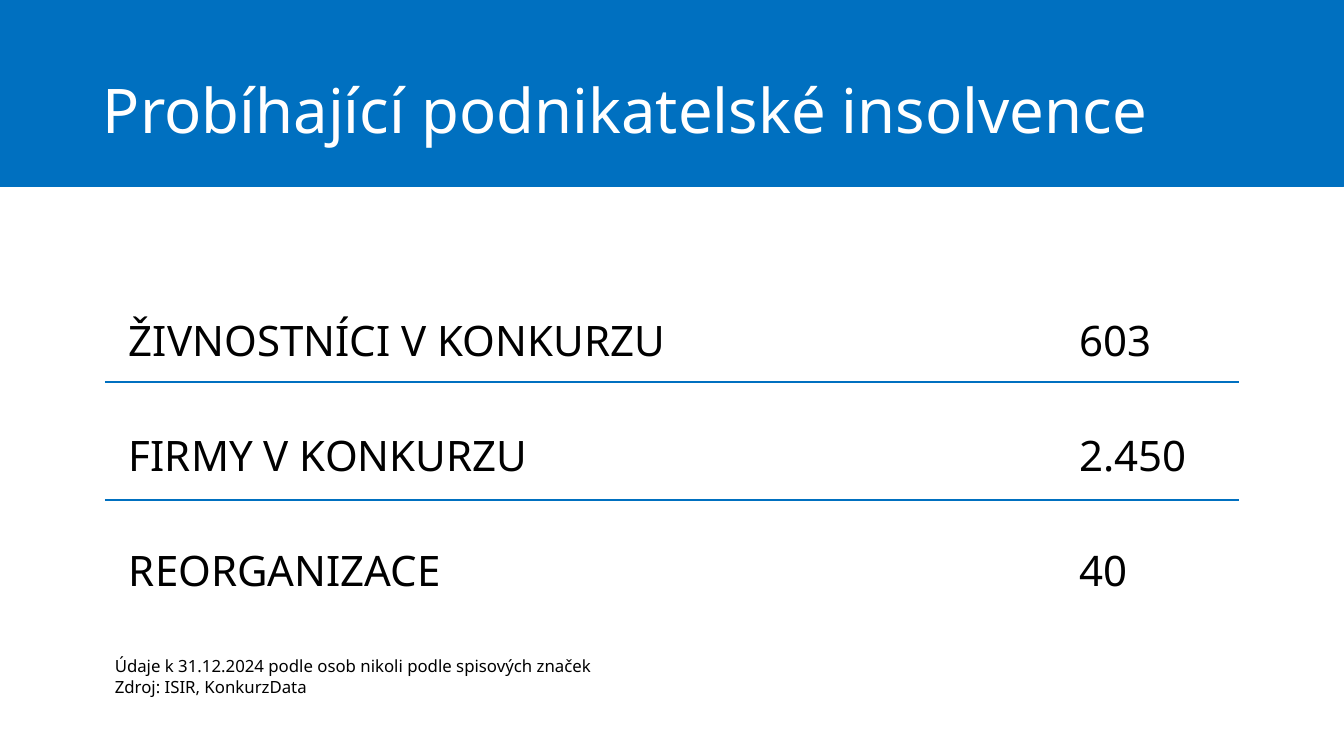
from dataclasses import dataclass

from lxml.etree import SubElement
from pptx import Presentation
from pptx.dml.color import RGBColor
from pptx.enum.shapes import MSO_CONNECTOR, MSO_SHAPE
from pptx.enum.text import MSO_ANCHOR, MSO_AUTO_SIZE as AutoSize
from pptx.oxml.ns import qn
from pptx.slide import Slide
from pptx.text.text import TextFrame
from pptx.util import Inches, Pt

BLUE = RGBColor(0x00, 0x70, 0xC0)
WHITE = RGBColor(0xFF, 0xFF, 0xFF)
BLACK = RGBColor(0x00, 0x00, 0x00)
FONT = "Noto Sans"
SLIDE_WIDTH = 13.33
TITLE_ONLY = 5
RULE_LEFT, RULE_RIGHT = 1.04, 12.29
RULE_TOPS = (3.79, 4.96)
ROWS = (
    ("ŽIVNOSTNÍCI V KONKURZU", "603"),
    ("FIRMY V KONKURZU", "2.450"),
    ("REORGANIZACE", "40"),
)
LABELS, COUNTS = zip(*ROWS)
COLUMN_SPACING = {"line_spacing": 2.0, "space_before": Pt(10)}


@dataclass(frozen=True)
class TextBlock:
    left: float
    top: float
    width: float
    height: float
    lines: tuple[str, ...]
    size: int
    spacing: dict
    auto_size: AutoSize


BLOCKS = (
    TextBlock(1.18, 2.57, 7.11, 3.49, LABELS, 30, COLUMN_SPACING, AutoSize.TEXT_TO_FIT_SHAPE),
    TextBlock(10.61, 2.57, 1.81, 3.49, COUNTS, 30, COLUMN_SPACING, AutoSize.TEXT_TO_FIT_SHAPE),
    TextBlock(
        1.04, 6.46, 9.26, 0.5,
        ("Údaje k 31.12.2024 podle osob nikoli podle spisových značek", "Zdroj: ISIR, KonkurzData"),
        12, {}, AutoSize.SHAPE_TO_FIT_TEXT,
    ),
)


def write_lines(
    frame: TextFrame, lines: tuple[str, ...], size: int, color: RGBColor, spacing: dict
) -> None:
    frame.text = "\n".join(lines)
    for paragraph in frame.paragraphs:
        for name, value in spacing.items():
            setattr(paragraph, name, value)
        font = paragraph.runs[0].font
        for name, value in {"name": FONT, "size": Pt(size)}.items():
            setattr(font, name, value)
        font.color.rgb = color


def add_header(slide: Slide) -> None:
    title = slide.shapes.title
    placement = {"left": 0.92, "top": 0.4, "width": 11.5, "height": 1.45}
    for name, value in placement.items():
        setattr(title, name, Inches(value))
    frame = title.text_frame
    frame.vertical_anchor = MSO_ANCHOR.MIDDLE
    frame.word_wrap = True
    write_lines(
        frame, ("Probíhající podnikatelské insolvence",), 44, WHITE,
        {"line_spacing": 0.9, "alignment": 1},
    )

    band = slide.shapes.add_shape(
        MSO_SHAPE.RECTANGLE, 0, 0, Inches(SLIDE_WIDTH), Inches(1.85)
    )
    band.shadow.inherit = False
    band.fill.solid()
    band.fill.fore_color.rgb = BLUE
    band.line.color.rgb = BLUE
    band.line.width = Pt(0)
    title.element.addprevious(band.element)


def add_block(slide: Slide, block: TextBlock) -> None:
    box = slide.shapes.add_textbox(
        Inches(block.left), Inches(block.top), Inches(block.width), Inches(block.height)
    )
    frame = box.text_frame
    frame.word_wrap = True
    frame.auto_size = block.auto_size
    write_lines(frame, block.lines, block.size, BLACK, block.spacing)


def add_rule(slide: Slide, top: float) -> None:
    rule = slide.shapes.add_connector(
        MSO_CONNECTOR.STRAIGHT,
        Inches(RULE_LEFT), Inches(top), Inches(RULE_RIGHT), Inches(top),
    )
    rule.line.color.rgb = BLUE
    rule.line.width = Pt(1.5)
    SubElement(rule.element.spPr, qn("a:effectLst"))


def main() -> None:
    presentation = Presentation()
    presentation.slide_width = Inches(SLIDE_WIDTH)
    presentation.slide_height = Inches(7.5)
    slide = presentation.slides.add_slide(presentation.slide_layouts[TITLE_ONLY])
    add_header(slide)
    for block in BLOCKS:
        add_block(slide, block)
    for top in RULE_TOPS:
        add_rule(slide, top)
    presentation.save("out.pptx")


if __name__ == "__main__":
    main()
